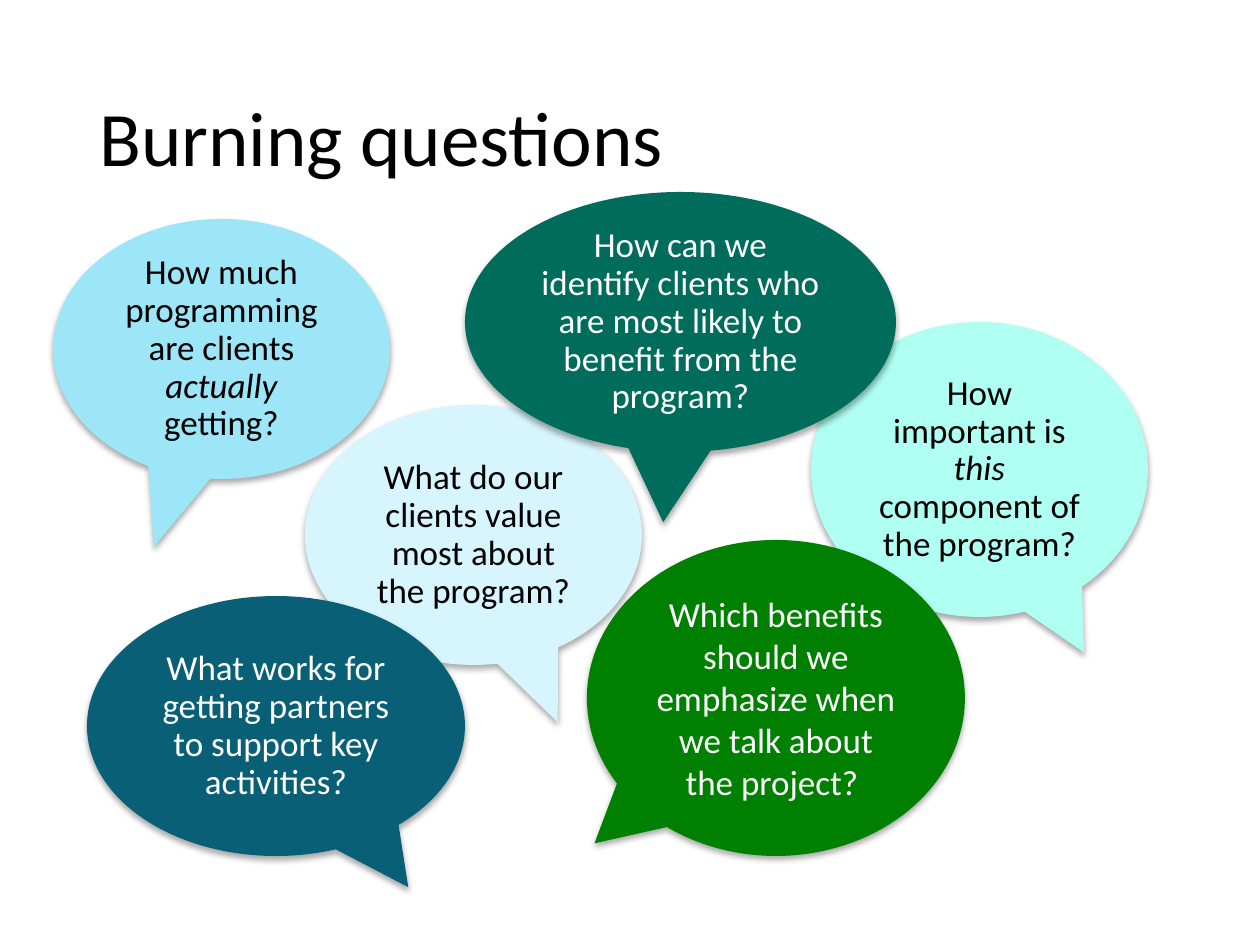
from lxml.etree import SubElement
from pptx import Presentation
from pptx.dml.color import RGBColor
from pptx.enum.shapes import MSO_SHAPE as Shape
from pptx.enum.text import MSO_ANCHOR as Anchor, PP_ALIGN as Align
from pptx.oxml.ns import qn
from pptx.util import Emu, Pt

BLACK = RGBColor(0x00, 0x00, 0x00)
WHITE = RGBColor(0xFF, 0xFF, 0xFF)
PALE_BLUE = RGBColor(0xD7, 0xF5, 0xFC)
SKY = RGBColor(0x9C, 0xE6, 0xF7)
MINT = RGBColor(0xAF, 0xFF, 0xF2)
PINE = RGBColor(0x00, 0x6C, 0x5B)
GREEN = RGBColor(0x00, 0x80, 0x00)
TEAL = RGBColor(0x09, 0x60, 0x76)


def px(length):
    return Emu(round(length * 914400 / 126))


def write(frame, text, *, size=20, color=BLACK, align=Align.CENTER,
          line_spacing=0.9, space_before=10, font="Calibri"):
    """Write text into a frame, setting words between asterisks in italics."""
    frame.word_wrap = True
    frame.vertical_anchor = Anchor.MIDDLE
    paragraph = frame.paragraphs[0]
    paragraph.alignment = align
    paragraph.line_spacing = line_spacing
    paragraph.space_before = Pt(space_before)
    for index, words in enumerate(text.split("*")):
        run = paragraph.add_run()
        run.text = words
        run.font.name = font
        run.font.size = Pt(size)
        run.font.color.rgb = color
        run.font.italic = index % 2 == 1


class QuestionSlide:
    def __init__(self, deck):
        self.shapes = deck.slides.add_slide(deck.slide_layouts[6]).shapes

    def title(self, text, box):
        heading = self.shapes.add_textbox(*map(px, box))
        write(heading.text_frame, text, size=44, align=Align.LEFT, space_before=0)

    def bubble(self, question, box, tail, fill, **text_format):
        callout = self.shapes.add_shape(Shape.OVAL_CALLOUT, *map(px, box))
        callout.adjustments[0], callout.adjustments[1] = tail
        callout.fill.solid()
        callout.fill.fore_color.rgb = fill
        callout.line.fill.background()
        self.cast_shadow(callout)
        write(callout.text_frame, question, **text_format)

    def cast_shadow(self, callout):
        callout.shadow.inherit = False
        effects = callout.element.spPr.find(qn("a:effectLst"))
        shadow = SubElement(effects, qn("a:outerShdw"), blurRad=str(Pt(3.5)),
                            dist=str(Pt(2.2)), dir="5400000", rotWithShape="0")
        tint = SubElement(shadow, qn("a:srgbClr"), val=str(BLACK))
        SubElement(tint, qn("a:alpha"), val="32000")


def main():
    deck = Presentation()
    deck.slide_width, deck.slide_height = px(1260), px(945)
    slide = QuestionSlide(deck)
    slide.title("Burning questions", (87, 50, 1086, 183))
    slide.bubble("What do our clients value most about the program?",
                 (305, 405, 337, 260), (0.25, 0.72), PALE_BLUE)
    slide.bubble("How much programming are clients *actually* getting?",
                 (53, 219, 337, 260), (-0.2, 0.76), SKY)
    slide.bubble("How important is *this* component of the program?",
                 (811, 322, 337, 295), (0.31, 0.62), MINT)
    slide.bubble("How can we identify clients who are most likely to benefit from the program?",
                 (465, 192, 431, 260), (-0.04, 0.77), PINE, color=WHITE)
    slide.bubble("Which benefits should we emphasize when we talk about the project? ",
                 (587, 540, 378, 316), (-0.48, 0.46), GREEN, color=WHITE,
                 line_spacing=1.0, space_before=0)
    slide.bubble("What works for getting partners to support key activities?",
                 (87, 596, 378, 260), (0.35, 0.62), TEAL, color=WHITE)
    deck.save("out.pptx")


if __name__ == "__main__":
    main()
